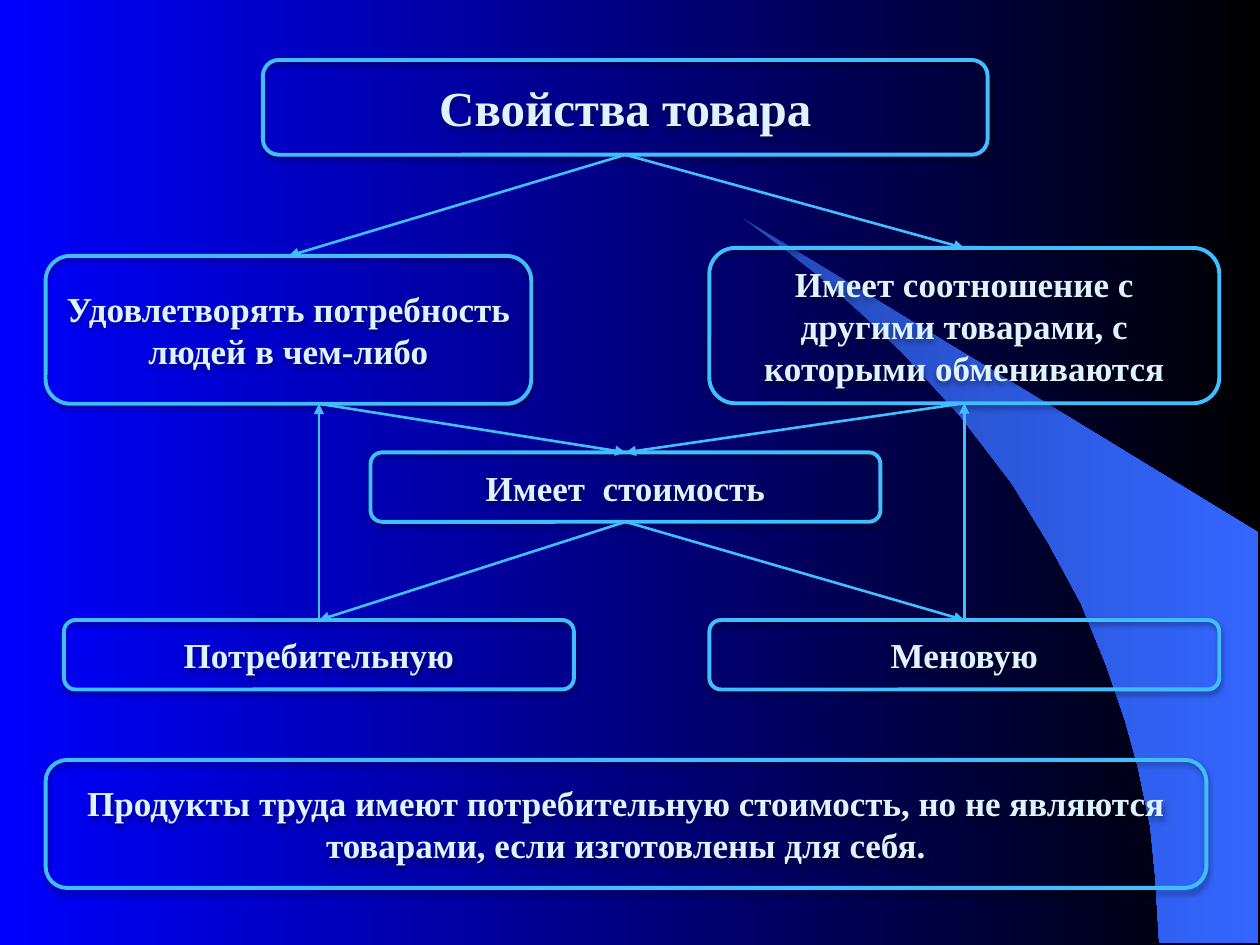
from dataclasses import dataclass

from lxml.etree import SubElement
from pptx import Presentation
from pptx.dml.color import RGBColor
from pptx.enum.shapes import MSO_CONNECTOR as Connector, MSO_SHAPE as Shape
from pptx.enum.text import MSO_ANCHOR as Anchor, PP_ALIGN as Align
from pptx.oxml.ns import qn
from pptx.util import Cm, Pt

BLUE = RGBColor(0x00, 0x00, 0xFF)
BLACK = RGBColor(0x00, 0x00, 0x00)
SWOOSH_DARK = RGBColor(0x24, 0x49, 0xB6)
SWOOSH_LIGHT = RGBColor(0x33, 0x66, 0xFF)
OUTLINE = RGBColor(0x40, 0xBE, 0xFF)
TEXT = RGBColor(0xDD, 0xF3, 0xFF)
FONT = "Times New Roman"

# Outline of the swoosh, in cm from its own corner
SWOOSH = [
    (8.41, 14.61), (10.41, 14.63), (10.41, 6.35), (0, 0), (0.89, 0.66),
    (1.63, 1.24), (2.44, 1.96), (3.23, 2.72), (4.39, 3.99), (5.44, 5.36),
    (6.17, 6.55), (6.83, 7.77), (7.34, 9.02), (7.72, 10.13), (7.98, 11.07),
    (8.23, 12.27), (8.33, 13.28),
]


@dataclass
class Box:
    """A rectangle in centimetres."""
    left: float
    top: float
    width: float
    height: float

    def inner(self, left, top, width, height):
        return Box(self.left + left, self.top + top, width, height)

    @property
    def top_centre(self):
        return self.left + self.width / 2, self.top

    @property
    def bottom_centre(self):
        return self.left + self.width / 2, self.top + self.height


def fill_gradient(fill, first, last):
    fill.gradient()
    fill.gradient_angle = 0
    for stop, colour in zip(fill.gradient_stops, (first, last)):
        stop.color.rgb = colour


def add_soft_shadow(shape):
    effects = SubElement(shape.element.spPr, qn("a:effectLst"))
    shadow = SubElement(effects, qn("a:outerShdw"), blurRad=str(Pt(3.1)),
                        dist=str(Pt(1.6)), dir="5400000", rotWithShape="0")
    colour = SubElement(shadow, qn("a:srgbClr"), val=str(BLACK))
    SubElement(colour, qn("a:alpha"), val="38000")


def add_frame(page, box, text, size=20, anchor=Anchor.MIDDLE):
    frame = page.shapes.add_shape(Shape.ROUNDED_RECTANGLE, Cm(box.left), Cm(box.top),
                                  Cm(box.width), Cm(box.height))
    frame.fill.background()
    frame.line.color.rgb = OUTLINE
    frame.line.width = Pt(2.25)
    add_soft_shadow(frame)

    body = frame.text_frame
    body.word_wrap = True
    body.vertical_anchor = anchor
    body.margin_left = body.margin_right = Cm(0.2)
    if anchor == Anchor.TOP:
        body.margin_top = Cm(0.25)
    para = body.paragraphs[0]
    para.text = text
    para.alignment = Align.CENTER
    para.font.name = FONT
    para.font.size = Pt(size)
    para.font.bold = True
    para.font.color.rgb = TEXT


def add_arrow(page, start, end):
    arrow = page.shapes.add_connector(Connector.STRAIGHT,
                                      *(Cm(value) for value in (*start, *end)))
    arrow.line.color.rgb = OUTLINE
    arrow.line.width = Pt(1.5)
    properties = arrow.element.spPr
    SubElement(properties.find(qn("a:ln")), qn("a:tailEnd"), type="triangle")
    SubElement(properties, qn("a:effectLst"))


def add_backdrop(page, box):
    fill_gradient(page.background.fill, BLUE, BLACK)
    points = [(Cm(box.left + x), Cm(box.top + y)) for x, y in SWOOSH]
    builder = page.shapes.build_freeform(*points[0], scale=1.0)
    builder.add_line_segments(points[1:], close=True)
    swoosh = builder.convert_to_shape()
    swoosh.shadow.inherit = False
    fill_gradient(swoosh.fill, SWOOSH_DARK, SWOOSH_LIGHT)
    swoosh.line.fill.background()


def add_diagram(page, box):
    title = box.inner(4.38, 0, 14.61, 1.91)
    need = box.inner(0, 3.95, 9.79, 2.98)
    ratio = box.inner(13.38, 3.79, 10.28, 3.13)
    value = box.inner(6.55, 7.91, 10.28, 1.4)
    use = box.inner(0.37, 11.29, 10.28, 1.4)
    exchange = box.inner(13.38, 11.29, 10.28, 1.4)

    # Frames
    add_frame(page, title, "Свойства товара", 28, Anchor.TOP)
    for frame, text in (
        (need, "Удовлетворять потребность людей в чем-либо"),
        (ratio, "Имеет соотношение с другими товарами, с которыми обмениваются"),
        (value, "Имеет  стоимость"),
        (use, "Потребительную"),
        (exchange, "Меновую"),
    ):
        add_frame(page, frame, text)

    # Arrows; those under the need frame line up with the use frame
    need_foot = (use.top_centre[0], need.bottom_centre[1])
    for start, end in (
        (title.bottom_centre, need.top_centre),
        (title.bottom_centre, ratio.top_centre),
        (value.bottom_centre, use.top_centre),
        (value.bottom_centre, exchange.top_centre),
        (use.top_centre, need_foot),
        (exchange.top_centre, ratio.bottom_centre),
        (need_foot, value.top_centre),
        (ratio.bottom_centre, value.top_centre),
    ):
        add_arrow(page, start, end)


def main():
    deck = Presentation()
    deck.slide_width, deck.slide_height = Cm(25.4), Cm(19.05)
    page = deck.slides.add_slide(deck.slide_layouts[6])
    add_backdrop(page, Box(14.96, 4.39, 10.41, 14.63))
    add_diagram(page, Box(0.92, 1.21, 23.66, 12.69))
    # Conclusion
    add_frame(page, Box(0.92, 15.32, 23.4, 2.58),
              "Продукты труда имеют потребительную стоимость, но не являются "
              "товарами, если изготовлены для себя.")
    deck.save("out.pptx")


if __name__ == "__main__":
    main()
